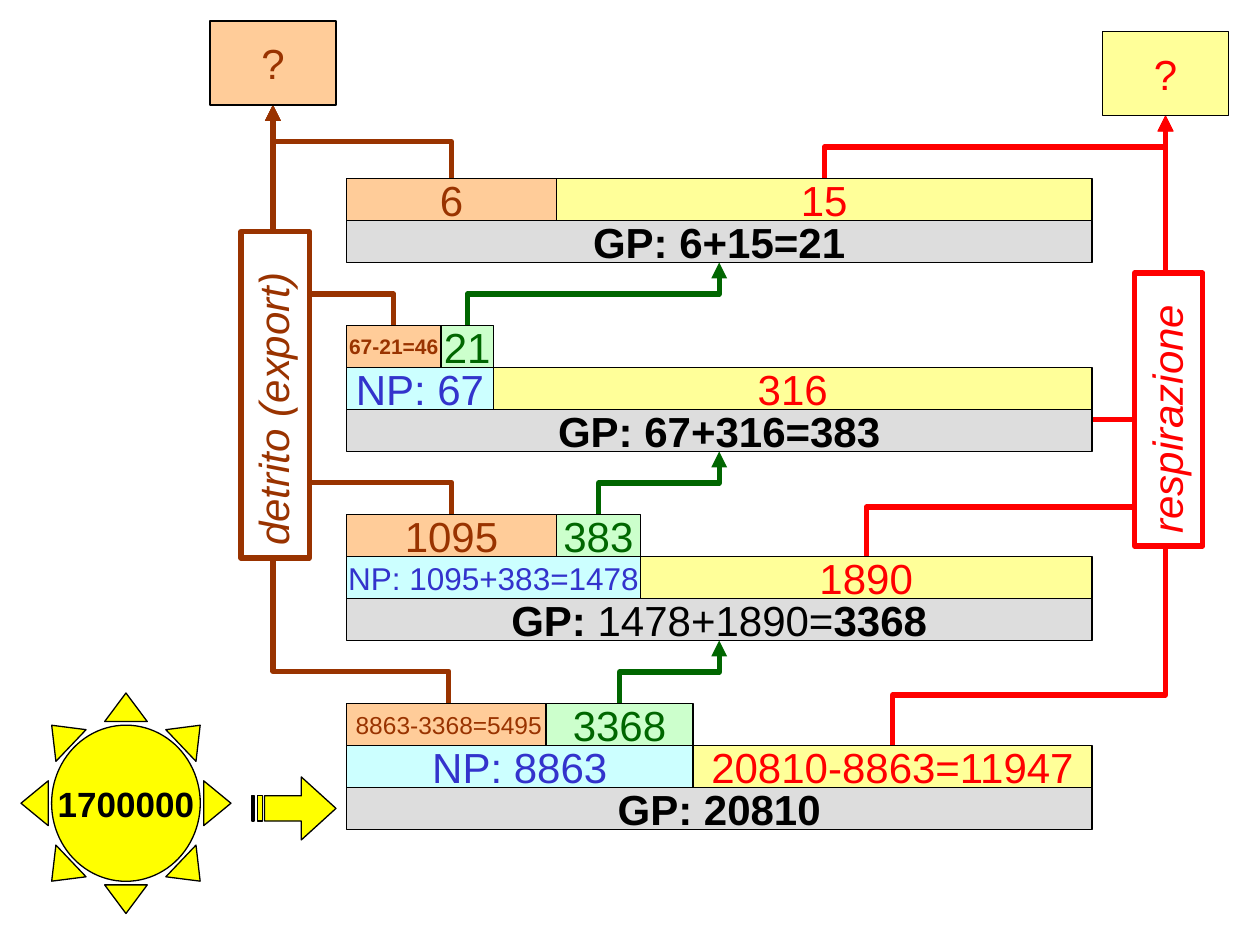
"""Energy flow through four trophic levels, with detritus and respiration losses."""
import math

import lxml.etree
import pptx
import pptx.dml.color
import pptx.enum.shapes
import pptx.enum.text
import pptx.oxml.ns
import pptx.util

LEVELS = [
    dict(gp=("GP: 20810",), np=("NP: 8863", 33, 24),
         loss=("8863-3368=5495", 19.5, 14, False), up=("3368", 14),
         resp="20810-8863=11947", bends=(3.1, 4.8)),
    dict(gp=("GP: ", "1478+1890=", "3368"), np=("NP: 1095+383=1478", 28, 18),
         loss=("1095", 20, 24, False), up=("383", 8),
         resp="1890", bends=(3.1, 4.7)),
    dict(gp=("GP: 67+316=383",), np=("NP: 67", 14, 24),
         loss=("67-21=46", 9, 12, True), up=("21", 5),
         resp="316", bends=(3, None)),
    dict(gp=("GP: 6+15=21",), np=None,
         loss=("6", 20, 24, False), up=None,
         resp="15", bends=(3.5, 3)),
]
SINKS = [("loss", 20, 2), ("resp", 105, 3)]
LABELS = [("respirazione", "resp", 111.3, 39, 26),
          ("detrito (export)", "loss", 26.2, 37.6, 31.1)]
SUN = ("1700000", 2, 66, 20, 21)
ARROW = [
    [(28.7, 74), (28.7, 75.8), (25.2, 75.8), (25.2, 78.2),
     (28.7, 78.2), (28.7, 80), (32, 77)],
    [(24.5, 75.8), (24.5, 78.2), (25, 78.2), (25, 75.8)],
    [(24, 75.8), (24, 78.2), (24.2, 78.2), (24.2, 75.8)],
]
THEME = dict(
    font="Arial", size=24, sun=20, thin=0.75, thick=3, edge="000000", paper="FFFFFF",
    fill=dict(gp="DDDDDD", np="CCFFFF", loss="FFCC99", up="CCFFCC", resp="FFFF99", sun="FFFF00"),
    ink=dict(gp="000000", np="3333CC", loss="993300", up="006600", resp="FF0000", sun="000000"),
)
UNIT = 2.54 / 12
LEFT, WIDE, ROW, BASE, STEP = 33, 71, 4, 75, 18
KINDS = pptx.enum.shapes.MSO_SHAPE
ALIGN = pptx.enum.text.PP_ALIGN
MID = pptx.enum.text.MSO_ANCHOR.MIDDLE


def span(num):
    return pptx.util.Cm(num * UNIT)


def tint(code):
    return pptx.dml.color.RGBColor.from_string(code)


def paint(shape, fill, edge, width):
    shape.shadow.inherit = False
    shape.fill.solid()
    shape.fill.fore_color.rgb = tint(fill)
    shape.line.color.rgb = tint(edge)
    shape.line.width = pptx.util.Pt(width)


def write(shape, runs, kind, size, align, bold=False, slant=False):
    para = shape.text_frame.paragraphs[0]
    para.alignment = align
    font = para.font
    font.name, font.size = THEME["font"], pptx.util.Pt(size)
    font.bold, font.italic = bold, slant
    font.color.rgb = tint(THEME["ink"][kind])
    for spot, text in enumerate(runs):
        run = para.add_run()
        run.text = text
        if spot % 2:
            run.font.bold = not bold


def block(slide, kind, runs, x, y, w, h=ROW, size=THEME["size"], bold=False, form=KINDS.RECTANGLE):
    shape = slide.shapes.add_shape(form, span(x), span(y), span(w), span(h))
    paint(shape, THEME["fill"][kind], THEME["edge"], THEME["thin"])
    shape.text_frame.word_wrap = False
    shape.text_frame.vertical_anchor = MID
    write(shape, runs, kind, size, ALIGN.CENTER, bold)
    return shape


def label(slide, text, kind, x, y, w, h=6.5):
    shape = slide.shapes.add_shape(
        KINDS.RECTANGLE, span(x - w / 2), span(y - h / 2), span(w), span(h))
    shape.rotation = 270
    paint(shape, THEME["paper"], THEME["ink"][kind], THEME["thick"])
    shape.text_frame.word_wrap = True
    shape.text_frame.vertical_anchor = pptx.enum.text.MSO_ANCHOR.TOP
    write(shape, [text], kind, THEME["size"], ALIGN.LEFT, slant=True)


def link(slide, kind, start, end, bend):
    (x, y), (right, top) = start, end
    if bend:
        side = math.copysign(1, right - x)
        midx, midy = (x + right) / 2, (y + top) / 2
        long, half = side * (y - top) / 2, abs(right - x) / 2
        ends = midx - long, midy - half, midx + long, midy + half
    else:
        ends = x, y, right, top
    line = slide.shapes.add_connector(
        pptx.enum.shapes.MSO_CONNECTOR.ELBOW, *[span(num) for num in ends])
    line.line.color.rgb = tint(THEME["ink"][kind])
    line.line.width = pptx.util.Pt(THEME["thick"])
    name = pptx.oxml.ns.qn
    props = line._element.spPr
    geom = props.find(name("a:prstGeom"))
    if bend:
        props.find(name("a:xfrm")).set("rot", "16200000" if side > 0 else "5400000")
        list_ = geom.find(name("a:avLst"))
        if list_ is None:
            list_ = lxml.etree.SubElement(geom, name("a:avLst"))
        ratio = round(bend / (y - top) * 100000)
        lxml.etree.SubElement(list_, name("a:gd"), name="adj1", fmla=f"val {ratio}")
    else:
        geom.set("prst", "bentConnector2")
    lxml.etree.SubElement(props.find(name("a:ln")), name("a:tailEnd"), type="triangle")
    lxml.etree.SubElement(props, name("a:effectLst"))


def flows(slide, level, base):
    goals = {kind: (x + 6, y + 8) for kind, x, y in SINKS}
    wide = level["loss"][1]
    edge = level["np"][1] if level["np"] else wide
    top = base - (2 * ROW if level["np"] else ROW)
    loss, resp = level["bends"]
    link(slide, "loss", (LEFT + wide / 2, top), goals["loss"], loss)
    drop = 0 if resp else ROW + 1
    link(slide, "resp", (LEFT + (edge + WIDE) / 2, base - ROW + drop), goals["resp"], resp)
    if level["up"]:
        x = LEFT + edge - level["up"][1] / 2
        link(slide, "up", (x, top), (LEFT + WIDE / 2, base - STEP + ROW), 3)


def bars(slide, level, base):
    text, wide, size, bold = level["loss"]
    edge, top = wide, base - ROW
    if level["np"]:
        name, edge, big = level["np"]
        block(slide, "np", [name], LEFT, top, edge, size=big)
        top -= ROW
    block(slide, "loss", [text], LEFT, top, wide, size=size, bold=bold)
    if level["up"]:
        name, part = level["up"]
        block(slide, "up", [name], LEFT + edge - part, top, part)
    block(slide, "resp", [level["resp"]], LEFT + edge, base - ROW, WIDE - edge)
    block(slide, "gp", level["gp"], LEFT, base, WIDE, bold=True)


def arrow(slide):
    paths = [[(span(x), span(y)) for x, y in part] for part in ARROW]
    pen = slide.shapes.build_freeform(*paths[0][0])
    for spot, part in enumerate(paths):
        if spot:
            pen.move_to(*part[0])
        pen.add_line_segments(part[1:], close=True)
    paint(pen.convert_to_shape(), THEME["fill"]["sun"], THEME["edge"], THEME["thin"])


def main():
    deck = pptx.Presentation()
    deck.slide_width, deck.slide_height = span(120), span(90)
    slide = deck.slides.add_slide(deck.slide_layouts[6])
    for draw in (flows, bars):
        for rank, level in enumerate(LEVELS):
            draw(slide, level, BASE - rank * STEP)
    for kind, x, y in SINKS:
        block(slide, kind, ["?"], x, y, 12, 8)
    for item in LABELS:
        label(slide, *item)
    text, *place = SUN
    sun = block(slide, "sun", [text], *place, size=THEME["sun"], bold=True, form=KINDS.SUN)
    sun.adjustments[0] = 0.146
    arrow(slide)
    deck.save("out.pptx")


if __name__ == "__main__":
    main()
